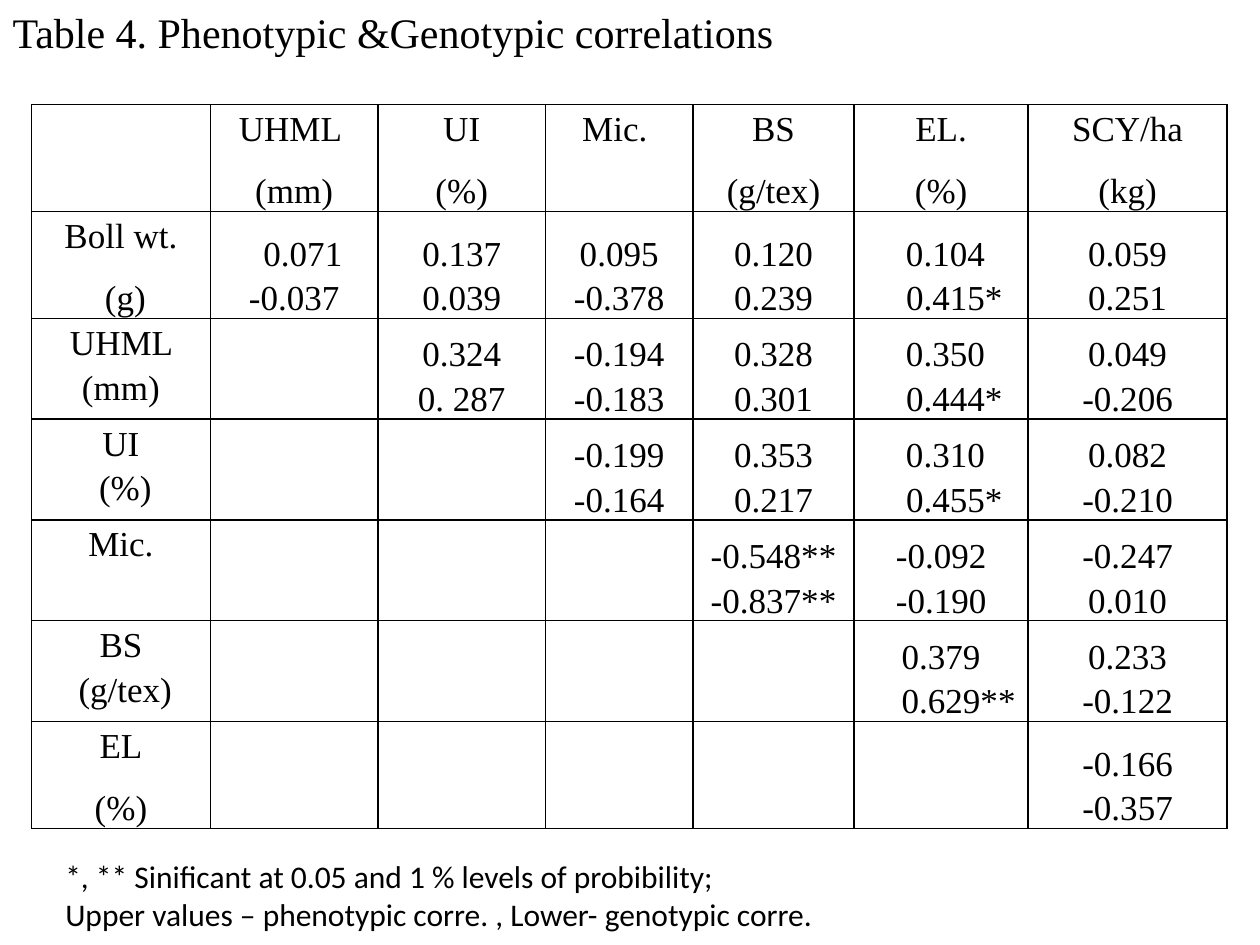
from dataclasses import dataclass

import lxml.etree
import pptx
import pptx.dml.color
import pptx.enum.text
import pptx.oxml.ns
import pptx.util

BLACK = "000000"
SERIF = "Times New Roman"
SANS = "Calibri"
TOP = pptx.enum.text.MSO_ANCHOR.TOP
BOTTOM = pptx.enum.text.MSO_ANCHOR.BOTTOM
LEFT = pptx.enum.text.PP_ALIGN.LEFT
CENTER = pptx.enum.text.PP_ALIGN.CENTER

COLUMN_WIDTHS = (1.42, 1.33, 1.33, 1.17, 1.28, 1.38, 1.58)
ROW_HEIGHTS = (0.83,) + (0.8,) * 6
INDENTS = {"0.071": 10, "0.415*": 15, "0.444*": 15, "0.455*": 15, "0.629**": 20}


@dataclass
class Heading:
    text: str
    space_after: int = 10
    anchor: pptx.enum.text.MSO_ANCHOR = TOP


@dataclass
class Trait:
    heading: Heading
    correlations: tuple[str, ...]


HEADERS = (
    Heading("UHML \n(mm)"),
    Heading("UI\n(%)"),
    Heading("Mic. "),
    Heading("BS\n(g/tex)"),
    Heading("EL.\n(%)"),
    Heading("SCY/ha\n(kg)", anchor=BOTTOM),
)

TRAITS = (
    Trait(Heading("Boll wt.\n (g)"), (
        "0.071\n-0.037", "0.137\n0.039", "0.095\n-0.378",
        "0.120\n0.239", " 0.104\n0.415*", "0.059\n0.251")),
    Trait(Heading("UHML (mm)"), (
        "0.324\n0. 287", "-0.194\n-0.183", "0.328\n0.301",
        " 0.350\n0.444*", "0.049\n-0.206")),
    Trait(Heading("UI\n (%)", 0), (
        "-0.199\n-0.164", "0.353\n0.217", " 0.310\n0.455*", "0.082\n-0.210")),
    Trait(Heading("Mic."), (
        "-0.548**\n-0.837**", "-0.092\n-0.190", "-0.247\n0.010")),
    Trait(Heading("BS\n (g/tex)", 0), ("0.379\n0.629**", "0.233\n-0.122")),
    Trait(Heading("EL\n(%)"), ("-0.166\n-0.357",)),
)


def color(value: str) -> pptx.dml.color.RGBColor:
    return pptx.dml.color.RGBColor.from_string(value)


def format_text(frame, font: str, size: int, align=LEFT,
                spacing: float = 1.0, space_after: int = 0) -> None:
    for para in frame.paragraphs:
        para.alignment = align
        para.line_spacing = spacing
        para.space_before = pptx.util.Pt(0)
        para.space_after = pptx.util.Pt(space_after)
        for span in para.runs:
            span.font.name = font
            span.font.size = pptx.util.Pt(size)
            span.font.bold = False
            span.font.color.rgb = color(BLACK)


def add_borders(cell) -> None:
    properties = cell._tc.get_or_add_tcPr()
    qn = pptx.oxml.ns.qn
    for side in ("lnL", "lnR", "lnT", "lnB"):
        line = lxml.etree.SubElement(
            properties, qn(f"a:{side}"), w=str(pptx.util.Pt(1)))
        fill = lxml.etree.SubElement(line, qn("a:solidFill"))
        lxml.etree.SubElement(fill, qn("a:srgbClr"), val=BLACK)


def fill_cell(cell, heading: Heading) -> None:
    cell.text_frame.text = heading.text
    cell.vertical_anchor = heading.anchor
    format_text(cell.text_frame, SERIF, 20, CENTER, 1.15, heading.space_after)
    for para in cell.text_frame.paragraphs:
        if para.text in INDENTS:
            indent = pptx.util.Pt(INDENTS[para.text])
            para._p.get_or_add_pPr().set("marL", str(indent))


def add_correlation_table(page) -> None:
    frame = page.shapes.add_table(
        len(ROW_HEIGHTS), len(COLUMN_WIDTHS),
        pptx.util.Inches(0.25), pptx.util.Inches(0.83),
        pptx.util.Inches(sum(COLUMN_WIDTHS)), pptx.util.Inches(sum(ROW_HEIGHTS)))
    table = frame.table
    table.first_row = False
    table.horz_banding = False
    for column, width in zip(table.columns, COLUMN_WIDTHS):
        column.width = pptx.util.Inches(width)
    for row, height in zip(table.rows, ROW_HEIGHTS):
        row.height = pptx.util.Inches(height)
    for cell in table.iter_cells():
        cell.margin_left = cell.margin_right = pptx.util.Inches(0.06)
        cell.margin_top = cell.margin_bottom = 0
        add_borders(cell)
        cell.fill.background()
    for column, header in enumerate(HEADERS, 1):
        fill_cell(table.cell(0, column), header)
    for row, trait in enumerate(TRAITS, 1):
        fill_cell(table.cell(row, 0), trait.heading)
        for column, values in enumerate(trait.correlations, row):
            # placeholder
            fill_cell(table.cell(row, column), Heading(values, 0, BOTTOM))


def place_text(box, text: str, left: float, top: float, width: float,
               height: float, font: str, size: int) -> None:
    box.left, box.top = pptx.util.Inches(left), pptx.util.Inches(top)
    box.width, box.height = pptx.util.Inches(width), pptx.util.Inches(height)
    frame = box.text_frame
    frame.text = text
    frame.word_wrap = False
    frame.auto_size = pptx.enum.text.MSO_AUTO_SIZE.NONE
    frame.vertical_anchor = TOP
    format_text(frame, font, size)


def main() -> None:
    deck = pptx.Presentation()
    deck.slide_width = pptx.util.Inches(10)
    deck.slide_height = pptx.util.Inches(7.5)
    page = deck.slides.add_slide(deck.slide_layouts[5])
    add_correlation_table(page)
    place_text(page.shapes.title, "Table 4. Phenotypic &Genotypic correlations",
               0, 0, 6.29, 0.91, SERIF, 24)
    note = page.shapes.add_textbox(0, 0, 0, 0)
    place_text(note, "*, ** Sinificant at 0.05 and 1 % levels of probibility;\n"
               "Upper values – phenotypic corre. , Lower- genotypic corre.",
               0.42, 6.75, 6.27, 0.71, SANS, 18)
    deck.save("out.pptx")


if __name__ == "__main__":
    main()
